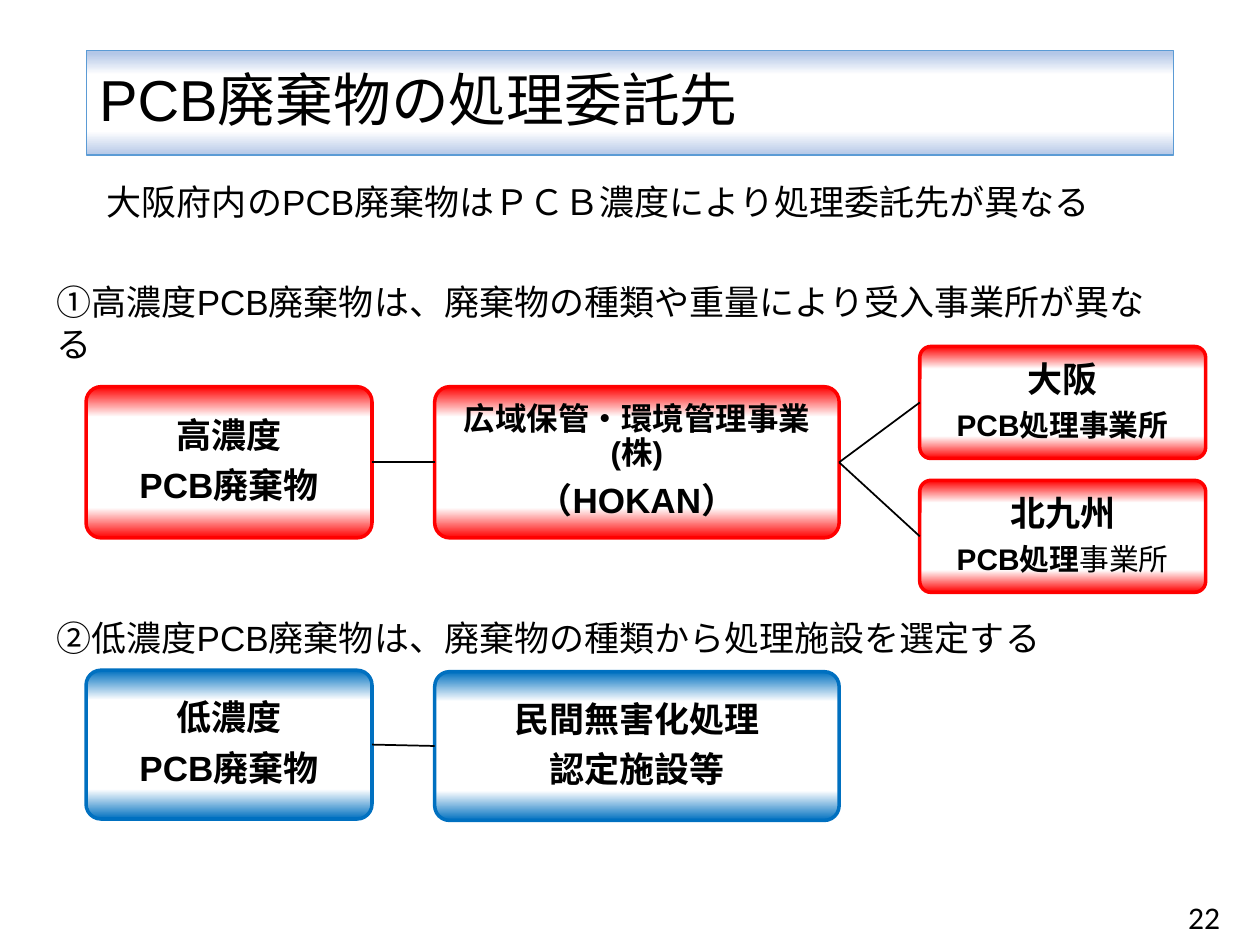
import pptx
import pptx.util
import pptx.dml.color
import pptx.enum.shapes
import pptx.enum.text
import pptx.oxml.ns
import lxml.etree

Pt = pptx.util.Pt
RGB = pptx.dml.color.RGBColor.from_string
qn = pptx.oxml.ns.qn
PP_ALIGN = pptx.enum.text.PP_ALIGN
MIDDLE = pptx.enum.text.MSO_ANCHOR.MIDDLE

COLORS = {
    "text": "000000",
    "white": "FFFFFF",
    "high": "FF0000",
    "low": "0070C0",
    "title band": "B4C7E7",
    "title line": "5B9BD5",
}


def paint_band(shape, edge, line, width, stops):
    """Vertical gradient, coloured at top and bottom and white between."""
    shape.fill.gradient()
    shape.fill.gradient_angle = 270
    stop_list = shape._element.spPr.find(qn("a:gradFill")).find(qn("a:gsLst"))
    for old_stop in list(stop_list):
        stop_list.remove(old_stop)
    for percent, color in zip(stops, (edge, "white", "white", edge)):
        stop = lxml.etree.SubElement(stop_list, qn("a:gs"), pos=str(percent * 1000))
        lxml.etree.SubElement(stop, qn("a:srgbClr"), val=COLORS[color])
    shape.line.color.rgb = RGB(COLORS[line])
    shape.line.width = Pt(width)


def write_paragraph(paragraph, text, size, font="Arial", bold=False):
    paragraph.text = text
    paragraph.font.size = Pt(size)
    paragraph.font.name = font
    paragraph.font.bold = bold
    paragraph.font.color.rgb = RGB(COLORS["text"])


deck = pptx.Presentation()
deck.slide_width, deck.slide_height = Pt(720), Pt(540)
slide = deck.slides.add_slide(deck.slide_layouts[5])

# Title
title = slide.shapes.title
title.left, title.top, title.width, title.height = Pt(49.4), Pt(28.8), Pt(621), Pt(59.8)
paint_band(title, "title band", "title line", 0.75, (3, 23, 77, 100))
title.text_frame.vertical_anchor = MIDDLE
title.text_frame.auto_size = pptx.enum.text.MSO_AUTO_SIZE.NONE
heading = title.text_frame.paragraphs[0]
write_paragraph(heading, "PCB廃棄物の処理委託先", 33)
heading.alignment = PP_ALIGN.LEFT
heading.line_spacing = 0.9

# Statements and page number
statements = [
    (54, 99.4, 634, 31.5, "大阪府内のPCB廃棄物はＰＣＢ濃度により処理委託先が異なる", 20, "Arial"),
    (25.2, 157, 646.6, 44, "①高濃度PCB廃棄物は、廃棄物の種類や重量により受入事業所が異なる", 20, "Arial"),
    (25.2, 348.5, 634, 31.5, "②低濃度PCB廃棄物は、廃棄物の種類から処理施設を選定する", 20, "Arial"),
    (671.8, 509.8, 39.6, 28.8, "22", 18, "Calibri"),
]
for left, top, width, height, text, size, font in statements:
    statement = slide.shapes.add_textbox(Pt(left), Pt(top), Pt(width), Pt(height))
    statement.text_frame.word_wrap = True
    write_paragraph(statement.text_frame.paragraphs[0], text, size, font)

# Flow boxes: column (left, width), top, height, edge colour, space after, font, lines
waste, contractor, plant = (49.2, 163.4), (248.4, 231.1), (525.6, 163.4)
flow = {
    "high waste": (waste, 221, 86.4, "high", 7, "Arial",
                   [("高濃度", 20), ("PCB廃棄物", 20)]),
    "high contractor": (contractor, 221, 86.4, "high", 6.5, "Arial",
                        [("広域保管・環境管理事業(株)", 18), ("（HOKAN）", 20)]),
    "osaka": (plant, 198, 64, "high", 6, "Arial",
              [("大阪", 20), ("PCB処理事業所", 17)]),
    "kitakyushu": (plant, 274.5, 64, "high", 6, "Arial",
                   [("北九州", 20), ("PCB処理", 17)]),
    "low waste": (waste, 383, 85, "low", 7, "Arial",
                  [("低濃度", 20), ("PCB廃棄物", 20)]),
    "low contractor": (contractor, 383.8, 85, "low", 7, "Calibri",
                       [("民間無害化処理", 20), ("認定施設等", 20)]),
}
boxes = {}
for step, ((left, width), top, height, edge, gap, font, lines) in flow.items():
    box = slide.shapes.add_shape(pptx.enum.shapes.MSO_SHAPE.ROUNDED_RECTANGLE,
                                 Pt(left), Pt(top), Pt(width), Pt(height))
    box.adjustments[0] = 0.1
    box.shadow.inherit = False
    paint_band(box, edge, edge, 2, (0, 20, 80, 100))
    frame = box.text_frame
    frame.word_wrap = True
    frame.vertical_anchor = MIDDLE
    frame.margin_left = frame.margin_right = Pt(3)
    frame.margin_top = frame.margin_bottom = Pt(3)
    frame.add_paragraph()
    for paragraph, (text, size) in zip(frame.paragraphs, lines):
        write_paragraph(paragraph, text, size, font, bold=True)
        paragraph.alignment = PP_ALIGN.CENTER
        paragraph.line_spacing = 0.9
        paragraph.space_after = Pt(gap)
    boxes[step] = box

office = boxes["kitakyushu"].text_frame.paragraphs[1].add_run()
office.text = "事業所"
office.font.bold = False

# Links from the right side of one box to the left side of the next
RIGHT, LEFT = 3, 1
links = [
    ("high waste", "high contractor"),
    ("high contractor", "osaka"),
    ("high contractor", "kitakyushu"),
    ("low waste", "low contractor"),
]
for source, target in links:
    link = slide.shapes.add_connector(pptx.enum.shapes.MSO_CONNECTOR.STRAIGHT, 0, 0, 0, 0)
    link.begin_connect(boxes[source], RIGHT)
    link.end_connect(boxes[target], LEFT)
    link.line.color.rgb = RGB(COLORS["text"])
    link.line.width = Pt(1)
    lxml.etree.SubElement(link._element.spPr, qn("a:effectLst"))

deck.save("out.pptx")
